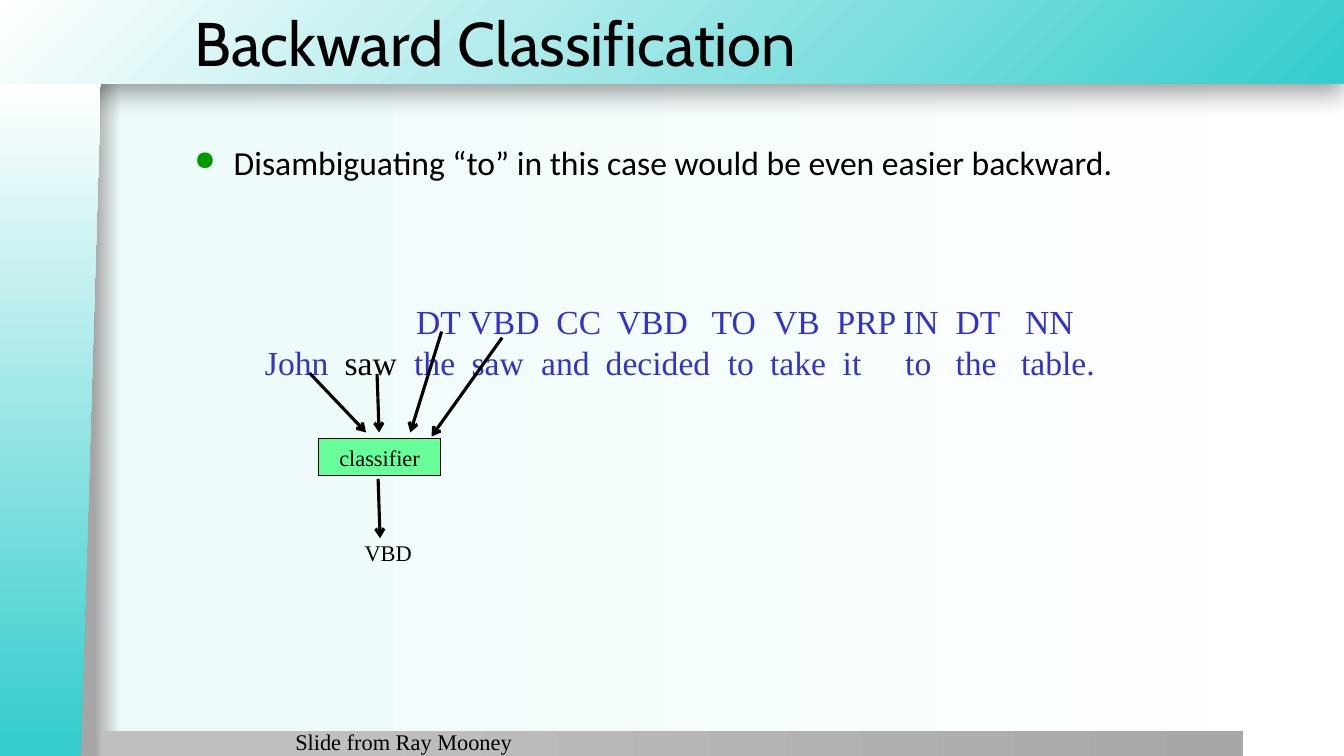
"""Builds the Backward Classification slide."""
from lxml.etree import SubElement
from pptx import Presentation
from pptx.dml.color import RGBColor
from pptx.enum.shapes import MSO_CONNECTOR, MSO_SHAPE
from pptx.enum.text import MSO_ANCHOR, PP_ALIGN
from pptx.oxml import parse_xml
from pptx.oxml.ns import nsdecls, qn
from pptx.util import Inches, Pt

BLACK = RGBColor(0x00, 0x00, 0x00)
BLUE = RGBColor(0x33, 0x33, 0xCC)
GREEN = RGBColor(0x66, 0xFF, 0x99)
BULLET = RGBColor(0x00, 0x99, 0x00)
TEAL = RGBColor(0x34, 0xCC, 0xCC)
WHITE = RGBColor(0xFF, 0xFF, 0xFF)
MINT = RGBColor(0xED, 0xFB, 0xFB)
EDGE_GREY = RGBColor(0xA6, 0xA6, 0xA6)
LIGHT_GREY = RGBColor(0xBF, 0xBF, 0xBF)
DARK_GREY = RGBColor(0xA7, 0xA7, 0xA7)
SERIF = "Times New Roman"
LINEAR = '<a:lin ang="0" scaled="0"/>'
CORNER = '<a:path path="circle"><a:fillToRect l="100000" t="100000"/></a:path>'


def paint_gradient(fill, element, stops, direction=LINEAR):
    fill.gradient()
    gradient = next(element.iter(qn("a:gradFill")))
    marks = "".join(
        f'<a:gs pos="{place * 1000}"><a:srgbClr val="{color}"/></a:gs>' for place, color in stops
    )
    gradient.getparent().replace(gradient, parse_xml(
        f'<a:gradFill {nsdecls("a")} rotWithShape="1"><a:gsLst>{marks}</a:gsLst>{direction}</a:gradFill>'
    ))


def write(para, text, size, font=SERIF, color=BLACK):
    span = para.add_run()
    span.text = text
    for name, value in {"size": Pt(size), "name": font}.items():
        setattr(span.font, name, value)
    span.font.color.rgb = color


deck = Presentation()
deck.slide_width, deck.slide_height = Inches(13.33), Inches(7.5)
page = deck.slides.add_slide(deck.slide_layouts[5])
paint_gradient(page.background.fill, page.element,
               [(7, EDGE_GREY), (9, MINT), (100, WHITE)])

bands = [
    (MSO_SHAPE.RECTANGLE, (0, 0, 13.33, 0.83), [(0, TEAL), (100, WHITE)], CORNER),
    (MSO_SHAPE.RECTANGLE, (1, 7.25, 11.33, 0.25), [(20, LIGHT_GREY), (100, DARK_GREY)], LINEAR),
    (MSO_SHAPE.FLOWCHART_MANUAL_INPUT, (-2.84, 3.67, 6.68, 1), [(1, TEAL), (100, WHITE)], LINEAR),
]
drawn_bands = []
for kind, place, stops, direction in bands:
    band = page.shapes.add_shape(kind, *map(Inches, place))
    band.shadow.inherit = False
    band.line.fill.background()
    paint_gradient(band.fill, band.element, stops, direction)
    drawn_bands.append(band)
header, footer, side = drawn_bands
side.rotation = 270
side.element.spPr.find(qn("a:xfrm")).set("flipV", "1")
header.element.spPr.find(qn("a:effectLst")).append(parse_xml(
    f'<a:outerShdw {nsdecls("a")} blurRad="{Pt(20)}" dist="{Pt(6)}" dir="5400000" algn="t" rotWithShape="0">'
    '<a:srgbClr val="000000"><a:alpha val="40000"/></a:srgbClr></a:outerShdw>'
))

title = page.shapes.title
title_place = {"left": 1.83, "top": 0, "width": 11.5, "height": 0.83}
for name, value in title_place.items():
    setattr(title, name, Inches(value))
title.text_frame.vertical_anchor = MSO_ANCHOR.MIDDLE
title.text_frame.paragraphs[0].alignment = PP_ALIGN.LEFT
write(title.text_frame.paragraphs[0], "Backward Classification", 44, "Cabin")
page.shapes._spTree.append(title.element)

box_places = {
    "body": (1.83, 1.36, 10.5, 5.79),
    "sentence": (2.53, 2.94, 8.8, 0.91),
    "result": (3.37, 5.3, 0.96, 0.37),
    "credit": (2.83, 7.17, 3.42, 0.25),
}
boxes = {}
for name, place in box_places.items():
    boxes[name] = page.shapes.add_textbox(*map(Inches, place)).text_frame
    boxes[name].word_wrap = True

point = boxes["body"].paragraphs[0]
write(point, "Disambiguating “to” in this case would be even easier backward.", 24, "Calibri")
layout = point._p.get_or_add_pPr()
for name, value in {"marL": 0.39, "indent": -0.39}.items():
    layout.set(name, str(Inches(value)))
spacing = SubElement(layout, qn("a:spcBef"))
SubElement(spacing, qn("a:spcPct"), val="20000")
SubElement(SubElement(layout, qn("a:buClr")), qn("a:srgbClr"), val=str(BULLET))
SubElement(layout, qn("a:buSzPct"), val="80000")
SubElement(layout, qn("a:buChar"), char="●")

tag_stops = [1.5, 2.02, 2.89, 3.49, 4.43, 5.04, 5.67, 6.33, 6.85, 7.54]
word_stops = [0.79, 1.48, 2.05, 2.74, 3.38, 4.59, 5.01, 5.73, 6.35, 6.85, 7.5]
tags = [("\tDT\tVBD\tCC\tVBD\tTO\tVB\tPRP\tIN\tDT\tNN", BLUE)]
words = [("John\t", BLUE), ("saw", BLACK),
         ("\tthe\tsaw\tand\tdecided\tto\ttake\tit\tto\tthe\ttable.", BLUE)]
sentence = boxes["sentence"]
rows = [(sentence.paragraphs[0], tag_stops, tags), (sentence.add_paragraph(), word_stops, words)]
for para, stops, spans in rows:
    tab_list = SubElement(para._p.get_or_add_pPr(), qn("a:tabLst"))
    for stop in stops:
        SubElement(tab_list, qn("a:tab"), pos=str(Inches(stop)), algn="l")
    for text, color in spans:
        write(para, text, 24, color=color)

classifier = page.shapes.add_shape(MSO_SHAPE.RECTANGLE, *map(Inches, (3.16, 4.35, 1.21, 0.37)))
classifier.shadow.inherit = False
classifier.fill.solid()
classifier.fill.fore_color.rgb = GREEN
classifier.line.color.rgb = BLACK
classifier.line.width = Pt(1)

labels = [
    (classifier.text_frame, "classifier", PP_ALIGN.CENTER),
    (boxes["result"], "VBD", PP_ALIGN.CENTER),
    (boxes["credit"], "Slide from Ray Mooney", PP_ALIGN.LEFT),
]
for frame, text, alignment in labels:
    frame.paragraphs[0].alignment = alignment
    write(frame.paragraphs[0], text, 16)

arrows = [
    (3.07, 3.7, 3.63, 4.29),
    (4.38, 3.29, 4.07, 4.29),
    (3.74, 3.71, 3.76, 4.29),
    (3.75, 4.75, 3.77, 5.34),
    (4.98, 3.35, 4.28, 4.33),
]
for ends in arrows:
    arrow = page.shapes.add_connector(MSO_CONNECTOR.STRAIGHT, *map(Inches, ends))
    arrow.line.color.rgb = BLACK
    arrow.line.width = Pt(2.25)
    SubElement(arrow.line._get_or_add_ln(), qn("a:tailEnd"), type="arrow")
    SubElement(arrow.element.spPr, qn("a:effectLst"))

deck.save("out.pptx")
